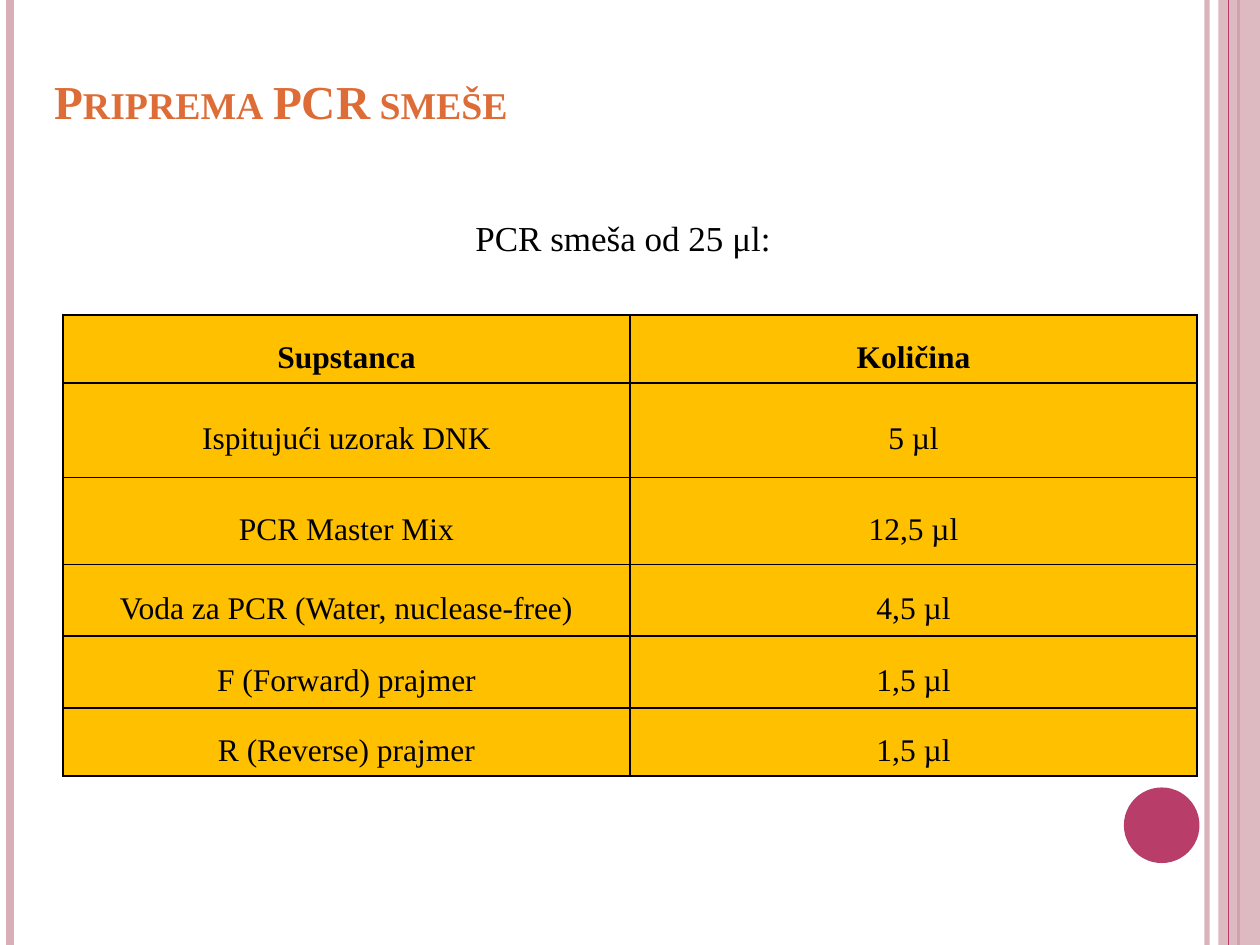
import pptx
import pptx.util
import pptx.dml.color
import pptx.enum.shapes
import pptx.enum.text
import pptx.oxml.ns
from dataclasses import dataclass
from lxml import etree

Inches = pptx.util.Inches
Pt = pptx.util.Pt
Shape = pptx.enum.shapes.MSO_SHAPE
Align = pptx.enum.text.PP_ALIGN
Anchor = pptx.enum.text.MSO_ANCHOR
qn = pptx.oxml.ns.qn


@dataclass(frozen=True)
class Theme:
    font: str = "Times New Roman"
    ink: str = "000000"
    title: str = "DE6C36"
    rose: str = "D8AFB9"
    wine: str = "B83D68"
    gold: str = "FFC000"
    head: int = 27
    body: int = 20
    cell: int = 18


theme = Theme()

ROWS = [
    ("Supstanca", "Količina"),
    ("Ispitujući uzorak DNK", "5 µl"),
    ("PCR Master Mix", "12,5 µl"),
    ("Voda za PCR (Water, nuclease-free)", "4,5 µl"),
    ("F (Forward) prajmer", "1,5 µl"),
    ("R (Reverse) prajmer", "1,5 µl"),
]
HEIGHTS = [0.54, 0.75, 0.69, 0.57, 0.57, 0.54]


def rgb(code):
    return pptx.dml.color.RGBColor.from_string(code)


def fade(part, percent):
    """Set the opacity of the part's solid colour."""
    tone = next(part._element.spPr.iter(qn("a:srgbClr")))
    etree.SubElement(tone, qn("a:alpha"), val=str(percent * 1000))


def place(shape, box):
    shape.left, shape.top, shape.width, shape.height = map(Inches, box)


def style(para, size, color, bold=False):
    for run in para.runs:
        run.font.name = theme.font
        run.font.size = Pt(size)
        run.font.bold = bold
        run.font.color.rgb = rgb(color)


def add_rule(slide, x, box, color, width):
    """Draw a vertical rule, x inches from the left of the box."""
    left, top, _, high = box
    rule = slide.shapes.add_connector(
        pptx.enum.shapes.MSO_CONNECTOR.STRAIGHT,
        Inches(left + x), Inches(top), Inches(left + x), Inches(top + high))
    rule.line.color.rgb = rgb(color)
    rule.line.width = Pt(width)
    etree.SubElement(rule._element.spPr, qn("a:effectLst"))
    return rule


def add_solid(slide, kind, box, color):
    shape = slide.shapes.add_shape(kind, *map(Inches, box))
    shape.shadow.inherit = False
    shape.fill.solid()
    shape.fill.fore_color.rgb = rgb(color)
    shape.line.fill.background()
    return shape


def add_frame(slide, box):
    """Side rules, right band and corner disc."""
    left, top, wide, high = box
    fade(add_rule(slide, wide - 0.42, box, theme.rose, 3), 93)
    add_rule(slide, 0.08, box, theme.rose, 4.5)
    add_rule(slide, wide - 0.17, box, theme.wine, 1.5)
    band = (left + wide - 0.33, top, 0.33, high)
    fade(add_solid(slide, Shape.RECTANGLE, band, theme.rose), 87)
    add_rule(slide, wide - 0.25, box, theme.wine, 0.75)
    disc = (left + wide - 1.08, top + high - 1.25, 0.6, 0.6)
    add_solid(slide, Shape.OVAL, disc, theme.wine)


def set_title(slide, box):
    title = slide.shapes.title
    place(title, box)
    frame = title.text_frame
    frame.text = "Priprema PCR smeše"
    frame.auto_size = pptx.enum.text.MSO_AUTO_SIZE.NONE
    frame.vertical_anchor = Anchor.BOTTOM
    frame.margin_bottom = Inches(0.48)
    para = frame.paragraphs[0]
    para.alignment = Align.LEFT
    style(para, theme.head, theme.title, True)
    para.runs[0].font._element.set("cap", "small")


def set_body(slide, box):
    body = slide.placeholders[1]
    place(body, box)
    frame = body.text_frame
    frame.text = "PCR smeša od 25 μl: "
    frame.auto_size = pptx.enum.text.MSO_AUTO_SIZE.NONE
    para = frame.paragraphs[0]
    para.alignment = Align.CENTER
    para.space_before = Pt(6)
    style(para, theme.body, theme.ink)
    props = para._p.get_or_add_pPr()
    props.set("marL", str(Inches(0.3)))
    props.set("indent", str(Inches(-0.3)))
    etree.SubElement(props, qn("a:buNone"))


def add_borders(cell):
    """Put a thin line on all four sides, ahead of the cell's fill."""
    props = cell._tc.get_or_add_tcPr()
    for spot, side in enumerate(("lnL", "lnR", "lnT", "lnB")):
        line = etree.Element(qn("a:" + side), w=str(Pt(1)))
        fill = etree.SubElement(line, qn("a:solidFill"))
        etree.SubElement(fill, qn("a:srgbClr"), val=theme.ink)
        props.insert(spot, line)


def fill_cell(cell, text, bold):
    cell.fill.solid()
    cell.fill.fore_color.rgb = rgb(theme.gold)
    cell.vertical_anchor = Anchor.MIDDLE
    cell.margin_left = cell.margin_right = Inches(0.07)
    cell.margin_top = cell.margin_bottom = 0
    cell.text_frame.text = text
    para = cell.text_frame.paragraphs[0]
    para.alignment = Align.CENTER
    para.line_spacing = 1.5
    style(para, theme.cell, theme.ink, bold)
    add_borders(cell)


def add_mix(slide, box):
    """Table of substances and amounts."""
    table = slide.shapes.add_table(
        len(ROWS), len(ROWS[0]), *map(Inches, box)).table
    for row, high in zip(table.rows, HEIGHTS):
        row.height = Inches(high)
    for r, texts in enumerate(ROWS):
        for c, text in enumerate(texts):
            fill_cell(table.cell(r, c), text, r == 0)


def main():
    deck = pptx.Presentation()
    deck.slide_width, deck.slide_height = Inches(10), Inches(7.5)
    slide = deck.slides.add_slide(deck.slide_layouts[1])
    add_frame(slide, (0, 0, 10, 7.5))
    set_body(slide, (0.33, 1.67, 9.3, 5))
    set_title(slide, (0.33, 0.67, 9.33, 0.83))
    add_mix(slide, (0.5, 2.5, 9, sum(HEIGHTS)))
    deck.save("out.pptx")


if __name__ == "__main__":
    main()
